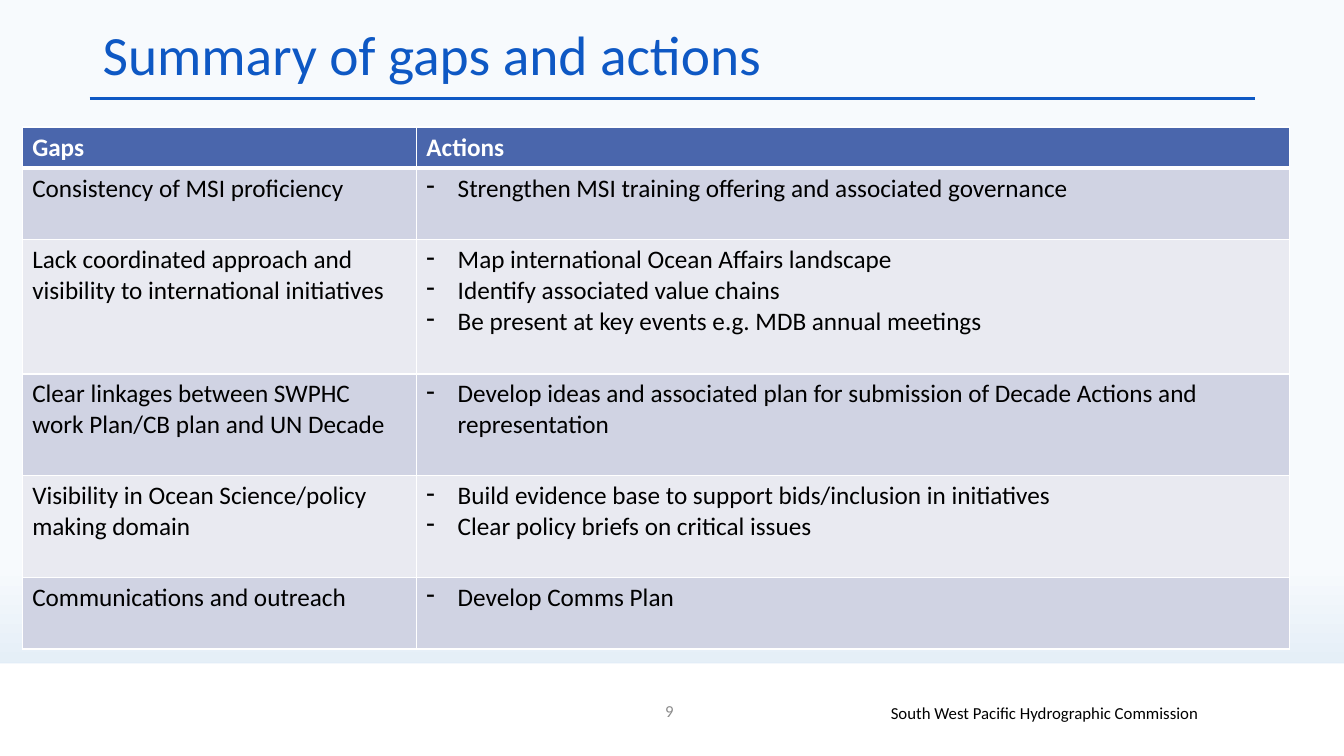
from lxml import etree
from pptx import Presentation
from pptx.dml.color import RGBColor
from pptx.enum.shapes import MSO_CONNECTOR, MSO_SHAPE
from pptx.enum.text import MSO_ANCHOR, PP_ALIGN
from pptx.oxml.ns import qn
from pptx.util import Inches, Pt

LEFT, CENTER = PP_ALIGN.LEFT, PP_ALIGN.CENTER
MIDDLE = MSO_ANCHOR.MIDDLE
RECT, STRAIGHT = MSO_SHAPE.RECTANGLE, MSO_CONNECTOR.STRAIGHT

BLUE = RGBColor(0x0E, 0x58, 0xC4)
HEAD = RGBColor(0x4A, 0x66, 0xAC)
DARK = RGBColor(0xD0, 0xD3, 0xE3)
PALE = RGBColor(0xE9, 0xEA, 0xF1)
WHITE = RGBColor(0xFF, 0xFF, 0xFF)
BLACK = RGBColor(0, 0, 0)
GRAY = RGBColor(0x8C, 0x8C, 0x8C)
SKY = [(0.75, RGBColor(0xF7, 0xFA, 0xFD)), (1, RGBColor(0xD0, 0xE2, 0xF1))]

TITLE = "Summary of gaps and actions"
FOOTER = "South West Pacific Hydrographic Commission"
NUMBER = "9"
HEADS = ("Gaps", "Actions")
ROWS = [
    (0.71, "Consistency of MSI proficiency",
     ["Strengthen MSI training offering and associated governance"]),
    (1.33, "Lack coordinated approach and visibility to international initiatives",
     ["Map international Ocean Affairs landscape",
      "Identify associated value chains",
      "Be present at key events e.g. MDB annual meetings"]),
    (1.01, "Clear linkages between SWPHC work Plan/CB plan and UN Decade",
     ["Develop ideas and associated plan for submission of Decade Actions and representation"]),
    (1.01, "Visibility in Ocean Science/policy making domain",
     ["Build evidence base to support bids/inclusion in initiatives",
      "Clear policy briefs on critical issues"]),
    (0.71, "Communications and outreach", ["Develop Comms Plan"]),
]
COLS = (3.91, 8.66)
TOP = 0.41


def write(frame, lines, size=18, color=BLACK, bold=False, align=LEFT,
          dash=False, space=None):
    frame.word_wrap = True
    for i, line in enumerate(lines):
        para = frame.paragraphs[0] if i == 0 else frame.add_paragraph()
        if dash:
            props = para._p.get_or_add_pPr()
            props.set("marL", str(Inches(0.31)))
            props.set("indent", str(-Inches(0.31)))
            etree.SubElement(props, qn("a:buChar"), char="-")
        para.alignment = align
        if space:
            para.line_spacing = space
        run = para.add_run()
        run.text = line
        font = run.font
        font.name, font.size, font.bold = "Calibri", Pt(size), bold
        font.color.rgb = color


def label(slide, box, text, **style):
    frame = slide.shapes.add_textbox(*map(Inches, box)).text_frame
    frame.vertical_anchor = MIDDLE
    write(frame, [text], **style)


def edge(cell, fill, base=1):
    props = cell._tc.get_or_add_tcPr()
    for side, width in (("L", 1), ("R", 1), ("T", 1), ("B", base)):
        line = etree.SubElement(props, qn("a:ln" + side), w=str(Pt(width)))
        solid = etree.SubElement(line, qn("a:solidFill"))
        etree.SubElement(solid, qn("a:srgbClr"), val=str(WHITE))
    cell.fill.solid()
    cell.fill.fore_color.rgb = fill


def backdrop(slide):
    fill = slide.background.fill
    fill.gradient()
    fill.gradient_angle = 270
    for stop, (place, color) in zip(fill.gradient_stops, SKY):
        stop.position = place
        stop.color.rgb = color
    rule = slide.shapes.add_connector(
        STRAIGHT, *map(Inches, (0.89, 0.98, 12.45, 0.98)))
    rule.line.color.rgb = BLUE
    rule.line.width = Pt(2.25)
    etree.SubElement(rule._element.spPr, qn("a:effectLst"))
    band = slide.shapes.add_shape(RECT, *map(Inches, (0, 6.58, 13.33, 0.92)))
    band.shadow.inherit = False
    band.fill.solid()
    band.fill.fore_color.rgb = WHITE
    band.line.fill.background()


def grid(slide):
    tall = TOP + sum(row[0] for row in ROWS)
    table = slide.shapes.add_table(
        len(ROWS) + 1, len(COLS),
        *map(Inches, (0.22, 1.26, sum(COLS), tall))).table
    for col, width in zip(table.columns, COLS):
        col.width = Inches(width)
    table.rows[0].height = Inches(TOP)
    for c, text in enumerate(HEADS):
        cell = table.cell(0, c)
        edge(cell, HEAD, base=3)
        write(cell.text_frame, [text], color=WHITE, bold=True)
    for r, (height, gap, acts) in enumerate(ROWS, 1):
        table.rows[r].height = Inches(height)
        for c, lines in enumerate(([gap], acts)):
            cell = table.cell(r, c)
            edge(cell, DARK if r % 2 else PALE)
            write(cell.text_frame, lines, dash=c == 1)


def main():
    deck = Presentation()
    deck.slide_width, deck.slide_height = Inches(13.33), Inches(7.5)
    slide = deck.slides.add_slide(deck.slide_layouts[6])
    backdrop(slide)
    label(slide, (8.6, 6.87, 3.52, 0.4), FOOTER, size=12, align=CENTER)
    label(slide, (0.92, 0.28, 11.5, 0.59), TITLE, size=39.6, color=BLUE, space=0.9)
    label(slide, (5.14, 6.85, 3, 0.4), NUMBER, size=12, color=GRAY, align=CENTER)
    grid(slide)
    deck.save("out.pptx")


if __name__ == "__main__":
    main()
